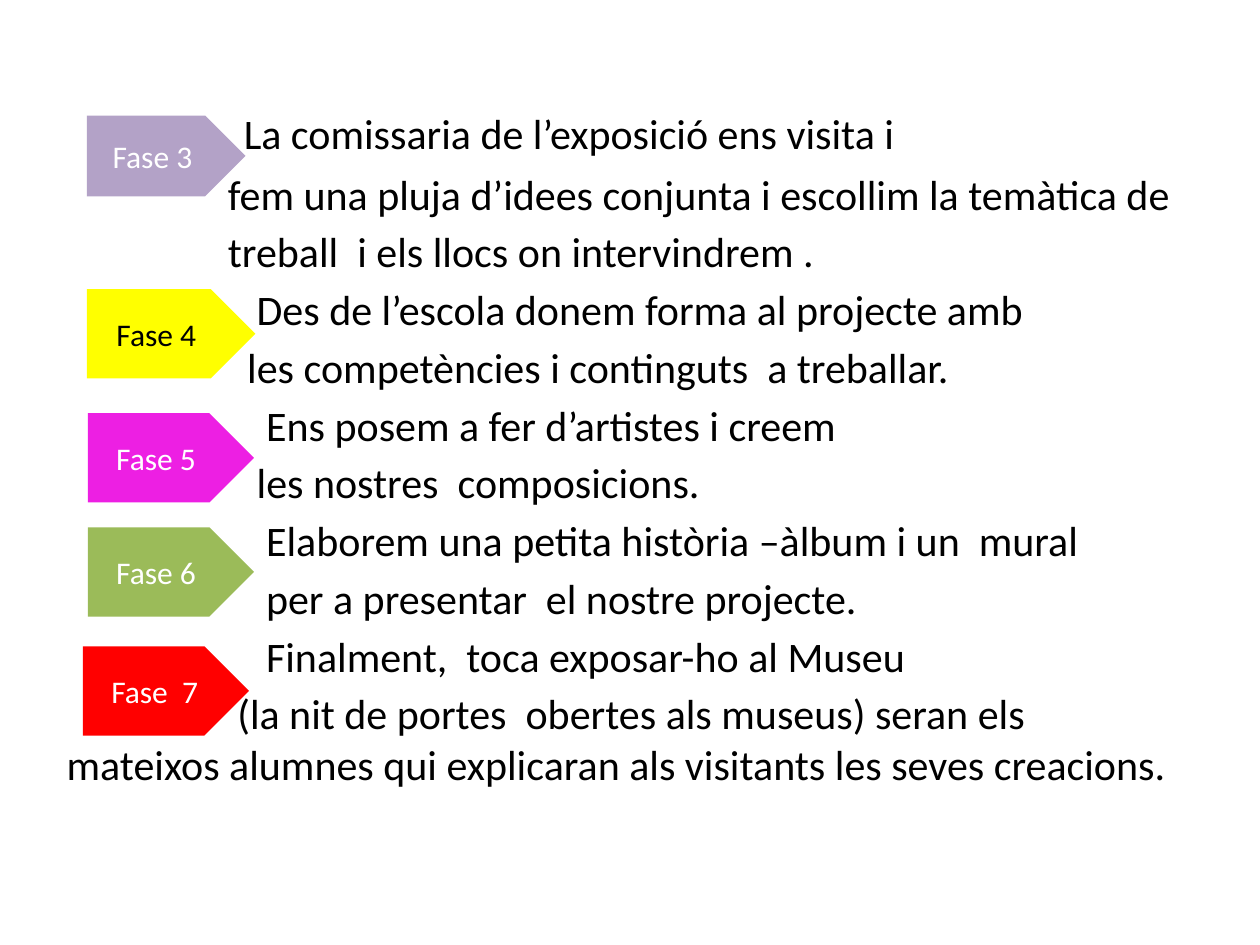
from dataclasses import dataclass

from lxml import etree
from pptx import Presentation
from pptx.dml.color import RGBColor
from pptx.enum import shapes, text
from pptx.oxml import ns
from pptx.util import Cm, Pt


@dataclass(frozen=True)
class Theme:
    font: str = "Calibri"
    body_size: int = 24
    label_size: int = 18
    black: str = "000000"
    white: str = "FFFFFF"
    lilac: str = "B3A2C7"
    yellow: str = "FFFF00"
    magenta: str = "ED1FE3"
    green: str = "9BBB59"
    red: str = "FF0000"


THEME = Theme()

BODY_LINES = [
    (3.57, 0, "La comissaria de l’exposició ens visita i"),
    (3.25, 6.1, "fem una pluja d’idees conjunta i escollim la temàtica de"),
    (3.25, 4.2, "treball  i els llocs on intervindrem ."),
    (3.83, 4.2, "Des de l’escola donem forma al projecte amb"),
    (3.64, 4.2, "les competències i continguts  a treballar."),
    (4.02, 4.2, "Ens posem a fer d’artistes i creem"),
    (3.83, 4.2, "les nostres  composicions."),
    (4.02, 4.2, "Elaborem una petita història –àlbum i un  mural"),
    (4.02, 4.2, "per a presentar  el nostre projecte."),
    (4.02, 4.2, "Finalment,  toca exposar-ho al Museu"),
    (3.44, 4.2, "(la nit de portes  obertes als museus) seran els "
                "mateixos alumnes qui explicaran als visitants les seves creacions."),
]

PHASES = [
    ("Fase 3 ", 1.75, 2.33, 3.2, 1.63, THEME.lilac, THEME.white),
    ("Fase 4 ", 1.75, 5.83, 3.4, 1.8, THEME.yellow, THEME.black),
    ("Fase 5 ", 1.77, 8.33, 3.35, 1.8, THEME.magenta, THEME.white),
    ("Fase 6 ", 1.77, 10.63, 3.35, 1.8, THEME.green, THEME.white),
    ("Fase  7", 1.67, 13.03, 3.35, 1.8, THEME.red, THEME.white),
]


def style_font(paragraph, size, color):
    paragraph.font.name = THEME.font
    paragraph.font.size = Pt(size)
    paragraph.font.color.rgb = RGBColor.from_string(color)


def set_first_line_indent(paragraph, indent):
    properties = paragraph._p.get_or_add_pPr()
    properties.set("marL", "0")
    properties.set("indent", str(int(Cm(indent))))
    etree.SubElement(properties, ns.qn("a:buNone"))


def fill_body(body):
    body.left, body.top = Cm(1.09), Cm(1.73)
    body.width, body.height = Cm(22.86), Cm(15.19)
    frame = body.text_frame
    frame.auto_size = text.MSO_AUTO_SIZE.NONE
    frame.margin_top = Cm(0.43)
    frame.text = "\n".join(line for _, _, line in BODY_LINES)
    for paragraph, (indent, space_before, _) in zip(frame.paragraphs, BODY_LINES):
        paragraph.space_before = Pt(space_before)
        set_first_line_indent(paragraph, indent)
        style_font(paragraph, THEME.body_size, THEME.black)


def add_phase(slide, label, left, top, width, height, fill, color):
    shape = slide.shapes.add_shape(
        shapes.MSO_SHAPE.PENTAGON, Cm(left), Cm(top), Cm(width), Cm(height))
    shape.shadow.inherit = False
    shape.fill.solid()
    shape.fill.fore_color.rgb = RGBColor.from_string(fill)
    shape.line.fill.background()
    frame = shape.text_frame
    frame.text = label
    frame.vertical_anchor = text.MSO_ANCHOR.MIDDLE
    paragraph = frame.paragraphs[0]
    paragraph.alignment = text.PP_ALIGN.CENTER
    style_font(paragraph, THEME.label_size, color)


def main():
    presentation = Presentation()
    presentation.slide_width, presentation.slide_height = Cm(25.4), Cm(19.05)
    slide = presentation.slides.add_slide(presentation.slide_layouts[1])
    title = slide.shapes.title.element
    title.getparent().remove(title)
    fill_body(slide.placeholders[1])
    for phase in PHASES:
        add_phase(slide, *phase)
    presentation.save("out.pptx")


if __name__ == "__main__":
    main()
